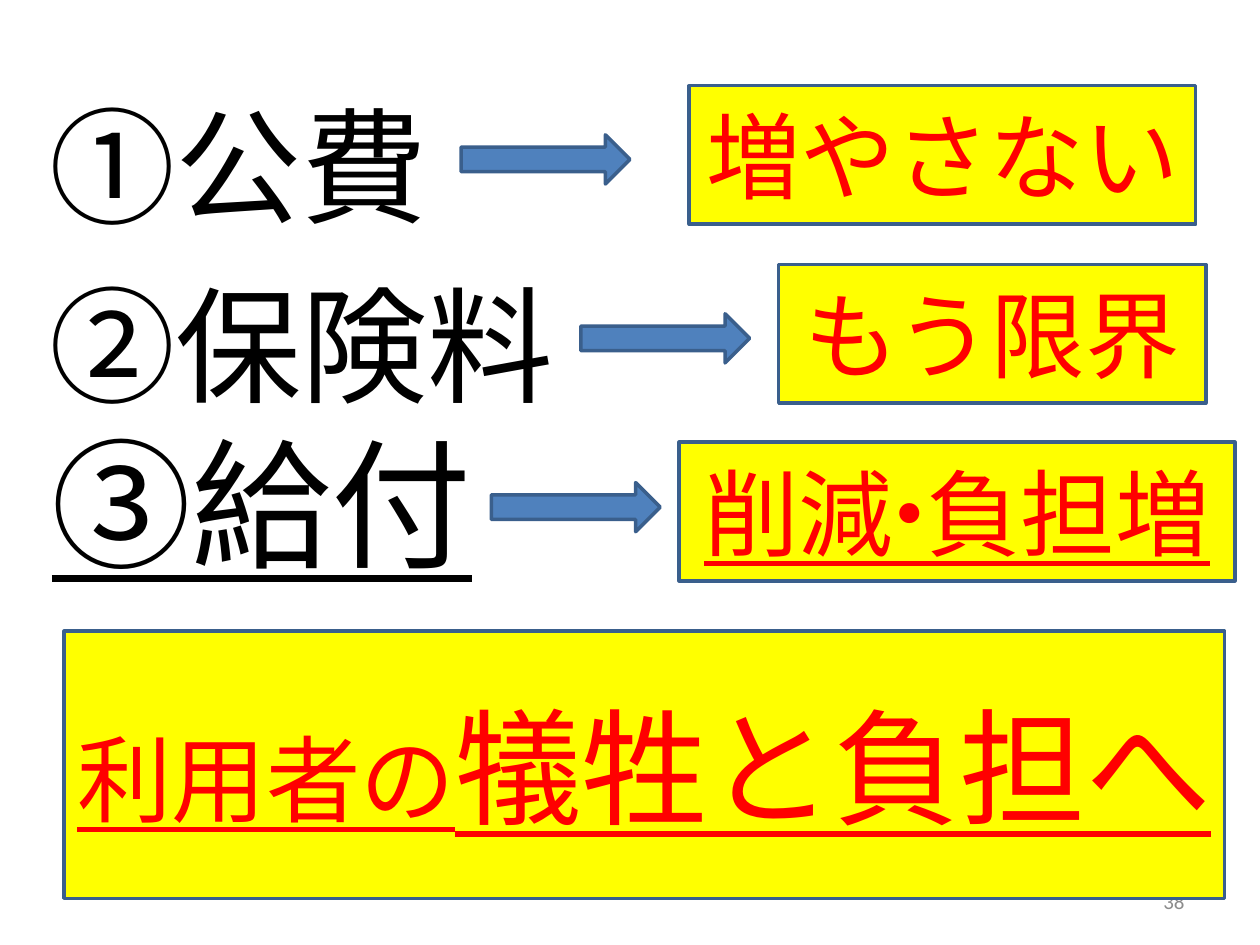
from dataclasses import dataclass

import pptx
import pptx.dml.color
import pptx.enum.shapes
import pptx.enum.text
import pptx.util

Inches = pptx.util.Inches
Pt = pptx.util.Pt
RGB = pptx.dml.color.RGBColor
SHAPE = pptx.enum.shapes.MSO_SHAPE
ALIGN = pptx.enum.text.PP_ALIGN
ANCHOR = pptx.enum.text.MSO_ANCHOR

FONT = "Calibri"
COLORS = {
    "topic": "000000",
    "alert": "FF0000",
    "box": "FFFF00",
    "arrow": "4F81BD",
    "outline": "3A5F8C",
    "number": "8C8C8C",
}
ARROW_SIZE = (1.34, 0.39)
BOX_HEIGHT = 1.1


@dataclass
class Run:
    text: str
    size: int
    underline: bool = False
    spacing: float = 0  # points added between characters


@dataclass
class Row:
    topic: Run
    topic_at: tuple[float, float, float, float]
    arrow_at: tuple[float, float]
    result: list[Run]
    result_at: tuple[float, float, float]  # left, top, width


# The middle dot is set tight so that the line fits its box
CUTS = [Run("削", 54, True), Run("減・負", 54, True, -17.5), Run("担増", 54, True)]
ROWS = [
    Row(Run("①公費", 72), (0.2, 0.44, 3.39, 1.73), (3.66, 1.07),
        [Run("増やさない", 54)], (5.47, 0.68, 4.02)),
    Row(Run("②保険料", 72), (0.27, 1.86, 4.25, 1.72), (4.61, 2.49),
        [Run("もう限界", 54)], (6.18, 2.1, 3.39)),
    Row(Run("③給付", 80, True), (0.27, 3.12, 3.62, 1.72), (3.9, 3.83),
        CUTS, (5.39, 3.51, 4.41)),
]
CONCLUSION = [Run("利用者の", 54, True), Run("犠牲と負担へ", 72, True)]


def write(sp, runs: list[Run], color: str, align=ALIGN.CENTER) -> None:
    """Fill a shape with one vertically centred line of runs."""
    tf = sp.text_frame
    for name, value in {"word_wrap": False, "vertical_anchor": ANCHOR.MIDDLE}.items():
        setattr(tf, name, value)
    p = tf.paragraphs[0]
    p.alignment = align
    for run in runs:
        r = p.add_run()
        r.text = run.text
        fmt = {"name": FONT, "size": Pt(run.size), "underline": run.underline}
        for name, value in fmt.items():
            setattr(r.font, name, value)
        r.font.color.rgb = RGB.from_string(COLORS[color])
        if run.spacing:
            r._r.get_or_add_rPr().set("spc", str(round(run.spacing * 100)))


def add_text(s, at: tuple, runs: list[Run], color: str, align=ALIGN.CENTER) -> None:
    write(s.shapes.add_textbox(*map(Inches, at)), runs, color, align)


def add_outlined(s, kind, at: tuple, fill: str):
    sp = s.shapes.add_shape(kind, *map(Inches, at))
    sp.shadow.inherit = False
    sp.fill.solid()
    sp.fill.fore_color.rgb = RGB.from_string(COLORS[fill])
    sp.line.color.rgb = RGB.from_string(COLORS["outline"])
    sp.line.width = Pt(2)
    return sp


def add_box(s, at: tuple, runs: list[Run]) -> None:
    write(add_outlined(s, SHAPE.RECTANGLE, at, "box"), runs, "alert")


def add_row(s, row: Row) -> None:
    add_outlined(s, SHAPE.RIGHT_ARROW, row.arrow_at + ARROW_SIZE, "arrow")
    add_text(s, row.topic_at, [row.topic], "topic")
    add_box(s, row.result_at + (BOX_HEIGHT,), row.result)


def main() -> None:
    prs = pptx.Presentation()
    prs.slide_width, prs.slide_height = Inches(10), Inches(7.5)
    s = prs.slides.add_slide(prs.slide_layouts[6])

    # Slide number, partly behind the conclusion
    add_text(s, (7.17, 6.95, 2.33, 0.4), [Run("38", 12)], "number", ALIGN.RIGHT)

    # Topic, arrow and result on each row
    for row in ROWS:
        add_row(s, row)

    # Conclusion
    add_box(s, (0.51, 5.01, 9.21, 2.12), CONCLUSION)

    prs.save("out.pptx")


if __name__ == "__main__":
    main()
